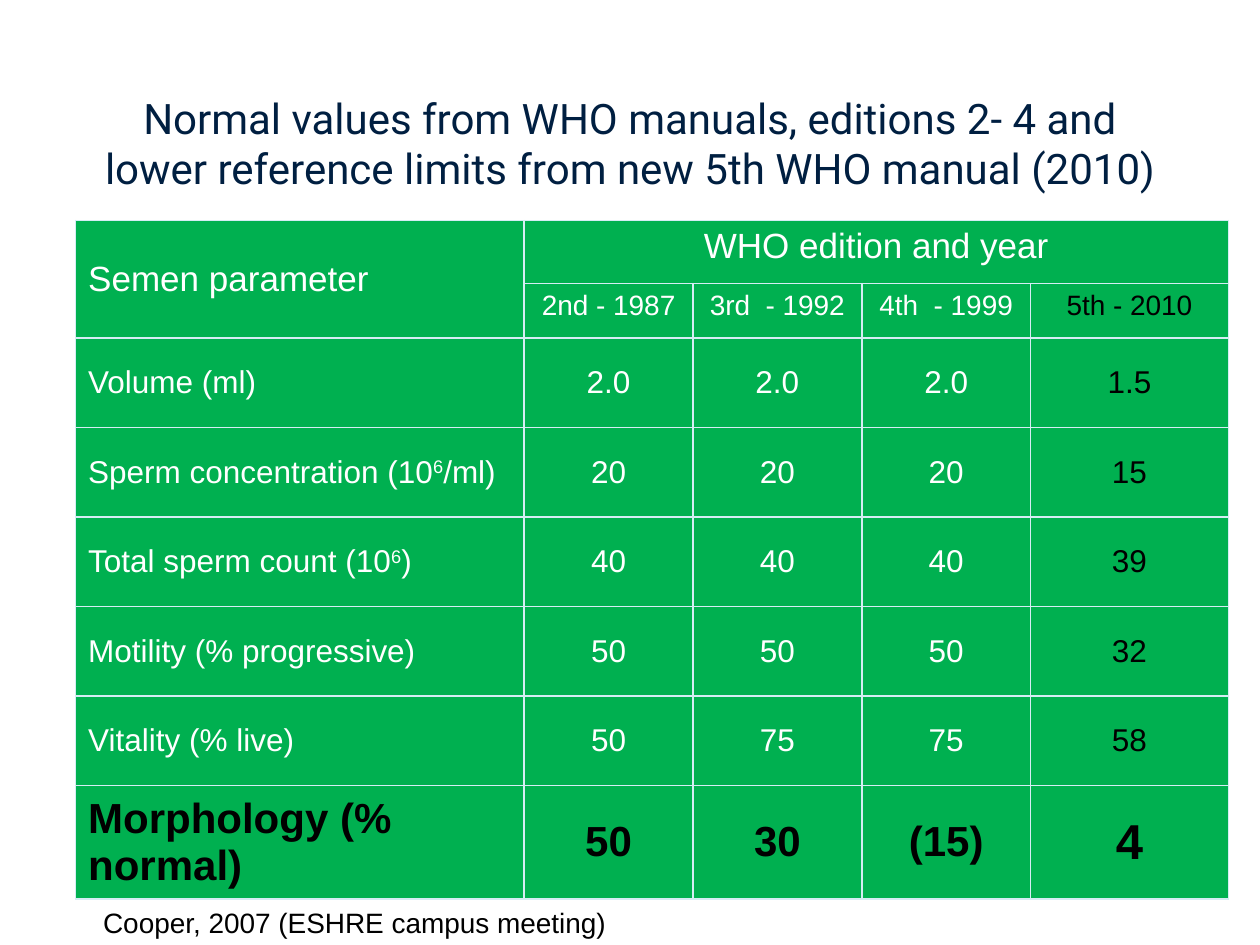
from pptx import Presentation
from pptx.dml.color import RGBColor
from pptx.enum.text import MSO_ANCHOR as Anchor, PP_ALIGN as Align
from pptx.oxml import parse_xml
from pptx.oxml.ns import nsdecls
from pptx.util import Inches, Pt

# Content: a tuple holds the runs of one label, every second one raised
TITLE = ("Normal values from WHO manuals, editions 2- 4 and "
         "lower reference limits from new 5th WHO manual (2010)")
CORNER = "Semen parameter"
GROUP = "WHO edition and year"
EDITIONS = ["2nd - 1987", "3rd  - 1992", "4th  - 1999", "5th - 2010"]
PARAMETERS = [
    (("Volume (ml)",), ["2.0", "2.0", "2.0", "1.5"]),
    (("Sperm concentration (10", "6", "/ml)"), ["20", "20", "20", "15"]),
    (("Total sperm count (10", "6", ")"), ["40", "40", "40", "39"]),
    (("Motility (% progressive)",), ["50", "50", "50", "32"]),
    (("Vitality (% live)",), ["50", "75", "75", "58"]),
    (("Morphology (% normal)",), ["50", "30", "(15)", "4"]),
]
SOURCE = "Cooper, 2007 (ESHRE campus meeting)"

COLORS = {"title": "001F41", "cell": "00B050", "border": "D5EDF4",
          "light": "FFFFFF", "dark": "000000"}
COLUMN_WIDTHS = [3.56, 1.34, 1.34, 1.34, 1.57]
ROW_HEIGHTS = [0.5, 0.4] + [0.71] * 5 + [0.9]


def write(para, runs, size, color, font="Arial", bold=False, align=Align.LEFT):
    para.alignment = align
    for index, text in enumerate(runs):
        span = para.add_run()
        span.text = text
        span.font.name = font
        span.font.size = Pt(size)
        span.font.bold = bold
        span.font.color.rgb = RGBColor.from_string(COLORS[color])
        if index % 2:
            span.font._element.set("baseline", "30000")


def add_text(page, left, top, width, height, anchor, text, **style):
    box = page.shapes.add_textbox(*map(Inches, (left, top, width, height)))
    frame = box.text_frame
    frame.word_wrap = True
    frame.vertical_anchor = anchor
    write(frame.paragraphs[0], [text], **style)
    return frame


def format_cell(cell):
    cell.fill.solid()
    cell.fill.fore_color.rgb = RGBColor.from_string(COLORS["cell"])
    properties = cell._tc.get_or_add_tcPr()
    for index, side in enumerate(("lnL", "lnR", "lnT", "lnB")):
        properties.insert(index, parse_xml(
            f'<a:{side} {nsdecls("a")} w="{Pt(1)}"><a:solidFill>'
            f'<a:srgbClr val="{COLORS["border"]}"/></a:solidFill></a:{side}>'))


def fill_cell(cell, runs, size, color="light", bold=False,
              align=Align.CENTER, anchor=Anchor.MIDDLE):
    cell.vertical_anchor = anchor
    write(cell.text_frame.paragraphs[0], runs, size, color,
          bold=bold, align=align)


deck = Presentation()
deck.slide_width, deck.slide_height = Inches(10), Inches(7.5)
page = deck.slides.add_slide(deck.slide_layouts[6])

# Title
title = add_text(page, 0.6, 0.12, 8.8, 1.46, Anchor.BOTTOM, TITLE, size=24,
                 color="title", font="Roboto", align=Align.CENTER)
title.margin_left = title.margin_right = Inches(0.12)

# Table grid
table = page.shapes.add_table(
    len(ROW_HEIGHTS), len(COLUMN_WIDTHS), Inches(0.6), Inches(1.75),
    Inches(sum(COLUMN_WIDTHS)), Inches(sum(ROW_HEIGHTS))).table
for column, width in zip(table.columns, COLUMN_WIDTHS):
    column.width = Inches(width)
for row, height in zip(table.rows, ROW_HEIGHTS):
    row.height = Inches(height)
for cell in table.iter_cells():
    format_cell(cell)

# Header rows
table.cell(0, 0).merge(table.cell(1, 0))
table.cell(0, 1).merge(table.cell(0, len(EDITIONS)))
fill_cell(table.cell(0, 0), [CORNER], 20, align=Align.LEFT)
fill_cell(table.cell(0, 1), [GROUP], 20, anchor=Anchor.TOP)
for col, edition in enumerate(EDITIONS, 1):
    color = "dark" if col == len(EDITIONS) else "light"
    fill_cell(table.cell(1, col), [edition], 16, color, anchor=Anchor.TOP)

# Parameter rows: the newest edition is dark, the last row is emphasised
for row, (label, values) in enumerate(PARAMETERS, 2):
    strong = row == len(ROW_HEIGHTS) - 1
    size = 24 if strong else 18
    fill_cell(table.cell(row, 0), label, size, "dark" if strong else "light",
              strong, Align.LEFT)
    for col, value in enumerate(values, 1):
        newest = col == len(values)
        fill_cell(table.cell(row, col), [value],
                  28 if strong and newest else size,
                  "dark" if strong or newest else "light", strong)

# Source line
add_text(page, 0.72, 7.14, 5.35, 0.37, Anchor.TOP, SOURCE, size=16,
         color="dark")

deck.save("out.pptx")
